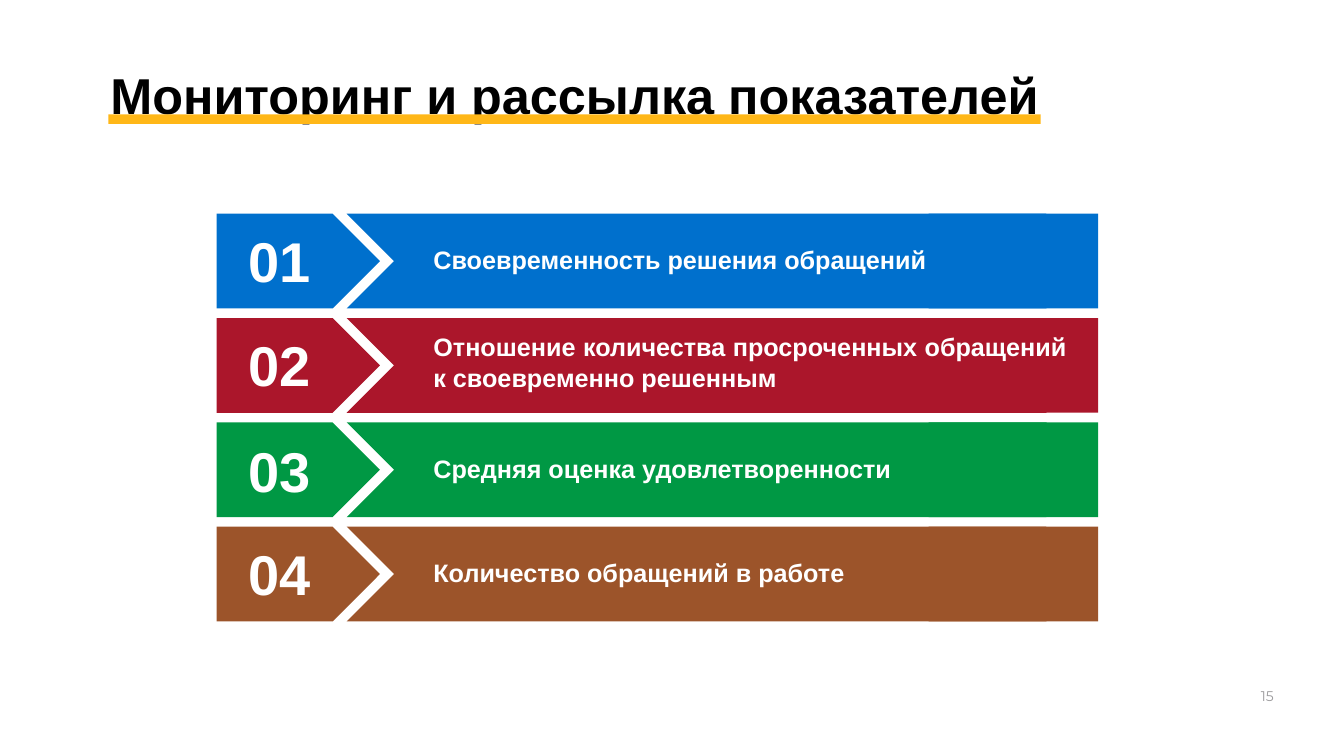
from pptx import Presentation
from pptx.dml.color import RGBColor
from pptx.enum.shapes import MSO_SHAPE as Shape
from pptx.enum.text import MSO_ANCHOR as Anchor, MSO_AUTO_SIZE as AutoSize, PP_ALIGN as Align
from pptx.util import Pt

EMU_PER_PX = 9144  # 100 px to the inch


def px(length):
    return length * EMU_PER_PX


def color(hex_string):
    return RGBColor.from_string(hex_string)


class SlideBuilder:
    font = "Arial"
    white = "FFFFFF"

    def __init__(self, slide):
        self.slide = slide

    def block(self, kind, left, top, width, height, fill, parent=None):
        shapes = (parent or self.slide).shapes
        shape = shapes.add_shape(kind, px(left), px(top), px(width), px(height))
        shape.shadow.inherit = False
        shape.fill.solid()
        shape.fill.fore_color.rgb = color(fill)
        shape.line.fill.background()
        return shape

    def text(self, words, left, top, width, height, size, align=Align.LEFT, fill=white,
             font=font, bold=True, inset=(20, 10), spacing=None, anchor=Anchor.TOP,
             grow=True):
        box = self.slide.shapes.add_textbox(px(left), px(top), px(width), px(height))
        frame = box.text_frame
        frame.word_wrap = True
        frame.auto_size = AutoSize.SHAPE_TO_FIT_TEXT if grow else AutoSize.NONE
        frame.vertical_anchor = anchor
        frame.margin_left = frame.margin_right = px(inset[0])
        frame.margin_top = frame.margin_bottom = px(inset[1])
        paragraph = frame.paragraphs[0]
        paragraph.text = words
        paragraph.alignment = align
        paragraph.line_spacing = spacing
        paragraph.font.name = font
        paragraph.font.size = Pt(size)
        paragraph.font.bold = bold
        paragraph.font.color.rgb = color(fill)

    def banner(self, top, height, fill):
        self.block(Shape.PENTAGON, 430, top, 324, height, fill)
        group = self.slide.shapes.add_group_shape()
        self.block(Shape.CHEVRON, 688, top, 1482, height, fill, group)
        self.block(Shape.RECTANGLE, 1843, top, 336, height, fill, group)


# Fill, label, label width and height, tops of number and label
ROWS = [
    ("0070CD", "Своевременность решения обращений", 1226, 81, 439, 474),
    ("AB162B", "Отношение количества просроченных обращений к своевременно решенным",
     1297, 141, 645, 648),
    ("009844", "Средняя оценка удовлетворенности", 1017, 81, 857, 890),
    ("9C542A", "Количество обращений в работе", 1017, 81, 1061, 1096),
]
FIRST_TOP, ROW_PITCH, ROW_HEIGHT = 424, 207, 188


def main():
    presentation = Presentation()
    presentation.slide_width = px(2667)
    presentation.slide_height = px(1500)
    builder = SlideBuilder(presentation.slides.add_slide(presentation.slide_layouts[6]))

    # Slide number
    builder.text("15", 2466, 1361, 98, 42, 20, Align.CENTER, "9B9A9C", "Montserrat",
                 bold=False, inset=(4, 4))

    # Title and its underline
    builder.text("Мониторинг и рассылка показателей", 215, 88, 1937, 173, 72,
                 fill="000000", inset=(4, 4), spacing=1.2, anchor=Anchor.MIDDLE, grow=False)
    builder.block(Shape.RECTANGLE, 215, 227, 1850, 19, "FFB718")

    # Numbered banners
    for index, (fill, label, width, height, number_top, label_top) in enumerate(ROWS):
        builder.banner(FIRST_TOP + index * ROW_PITCH, ROW_HEIGHT, fill)
        builder.text(f"{index + 1:02}", 445, number_top, 221, 155, 80, Align.CENTER)
        builder.text(label, 840, label_top, width, height, 36, Align.JUSTIFY)

    presentation.save("out.pptx")


if __name__ == "__main__":
    main()
